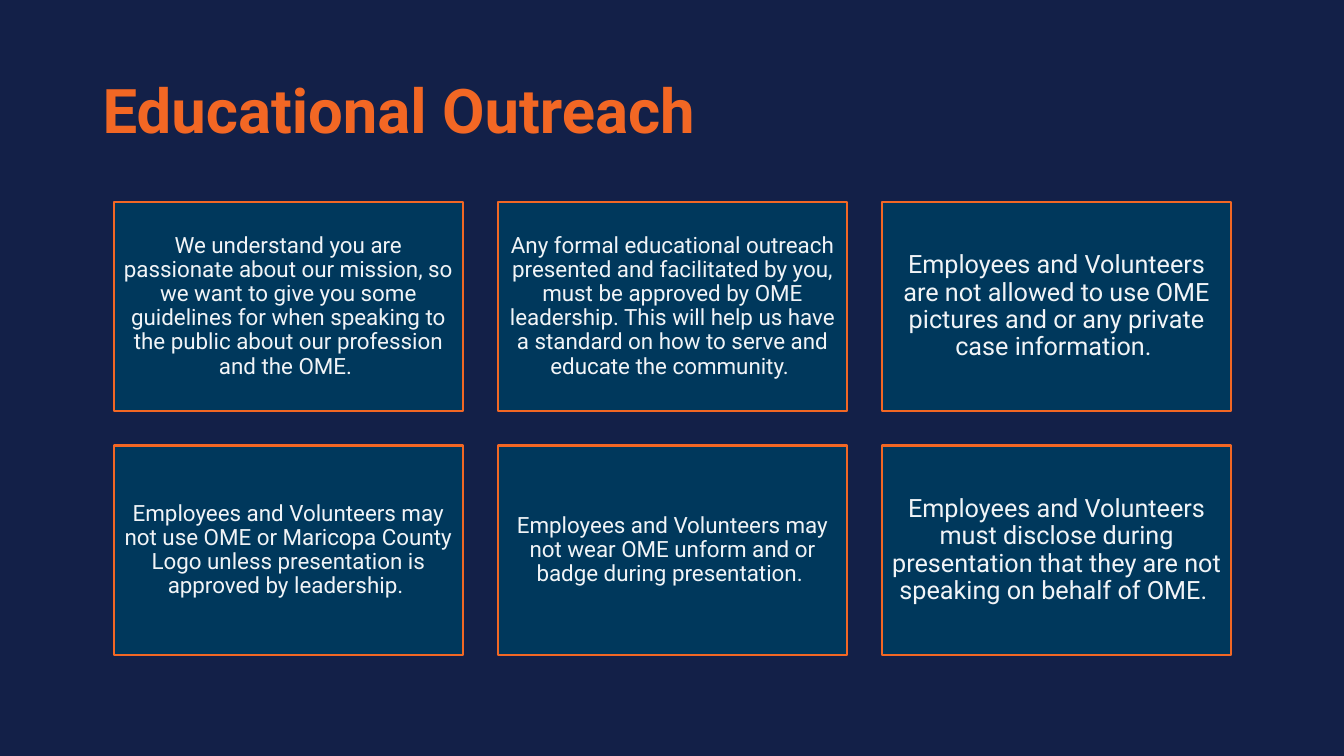
from pptx import Presentation
from pptx.dml.color import RGBColor
from pptx.enum.shapes import MSO_SHAPE
from pptx.enum.text import MSO_ANCHOR, PP_ALIGN
from pptx.util import Inches, Pt

NAVY = RGBColor(0x13, 0x20, 0x48)
TEAL = RGBColor(0x00, 0x38, 0x5C)
ORANGE = RGBColor(0xF2, 0x67, 0x24)
PALE = RGBColor(0xF1, 0xF4, 0xF7)

COLUMNS = 3
LEFT, TOP = 1.13, 2
CARD_WIDTH, CARD_HEIGHT = 3.46, 2.08
COLUMN_STEP, ROW_STEP = 3.81, 2.42

GUIDELINES = [
    ("We understand you are passionate about our mission, so we want to give you some "
     "guidelines for when speaking to the public about our profession and the OME. ", 16),
    ("Any formal educational outreach presented and facilitated by you, must be approved by "
     "OME leadership. This will help us have a standard on how to serve and educate the "
     "community. ", 16),
    ("Employees and Volunteers are not allowed to use OME pictures and or any private case "
     "information. ", 18),
    ("Employees and Volunteers may not use OME or Maricopa County Logo unless presentation is "
     "approved by leadership. ", 16),
    ("Employees and Volunteers may not wear OME unform and or badge during presentation. ", 16),
    ("Employees and Volunteers must disclose during presentation that they are not speaking on "
     "behalf of OME. ", 18),
]


def apply(target, values):
    for name, value in values.items():
        setattr(target, name, value)


class OutreachSlide:
    """Draws the elements of one slide in a shared style."""

    font_name = "Roboto"
    frame_format = {"word_wrap": True, "vertical_anchor": MSO_ANCHOR.MIDDLE}
    card_margins = {f"margin_{side}": Inches(0.07) for side in ("left", "top", "right", "bottom")}

    def __init__(self, presentation):
        self.slide = presentation.slides.add_slide(presentation.slide_layouts[6])
        background = self.slide.background.fill
        background.solid()
        background.fore_color.rgb = NAVY

    def set_text(self, frame, text, size, color, align, bold=False):
        apply(frame, self.frame_format)
        paragraph = frame.paragraphs[0]
        apply(paragraph, {"text": text, "alignment": align, "line_spacing": 0.9})
        font = paragraph.runs[0].font
        apply(font, {"name": self.font_name, "size": Pt(size), "bold": bold})
        font.color.rgb = color

    def title(self, text):
        heading = self.slide.shapes.add_textbox(
            Inches(0.92), Inches(0.4), Inches(11.5), Inches(1.45))
        self.set_text(heading.text_frame, text, 44, ORANGE, PP_ALIGN.LEFT, bold=True)

    def card(self, left, top, text, size):
        card = self.slide.shapes.add_shape(
            MSO_SHAPE.RECTANGLE, Inches(left), Inches(top),
            Inches(CARD_WIDTH), Inches(CARD_HEIGHT))
        card.shadow.inherit = False
        card.fill.solid()
        card.fill.fore_color.rgb = TEAL
        card.line.color.rgb = ORANGE
        card.line.width = Pt(1.5)
        apply(card.text_frame, self.card_margins)
        self.set_text(card.text_frame, text, size, PALE, PP_ALIGN.CENTER)


def main():
    presentation = Presentation()
    apply(presentation, {"slide_width": Inches(13.33), "slide_height": Inches(7.5)})
    outreach = OutreachSlide(presentation)
    outreach.title("Educational Outreach")
    for index, (guideline, size) in enumerate(GUIDELINES):
        row, column = divmod(index, COLUMNS)
        outreach.card(LEFT + column * COLUMN_STEP, TOP + row * ROW_STEP, guideline, size)
    presentation.save("out.pptx")


if __name__ == "__main__":
    main()
